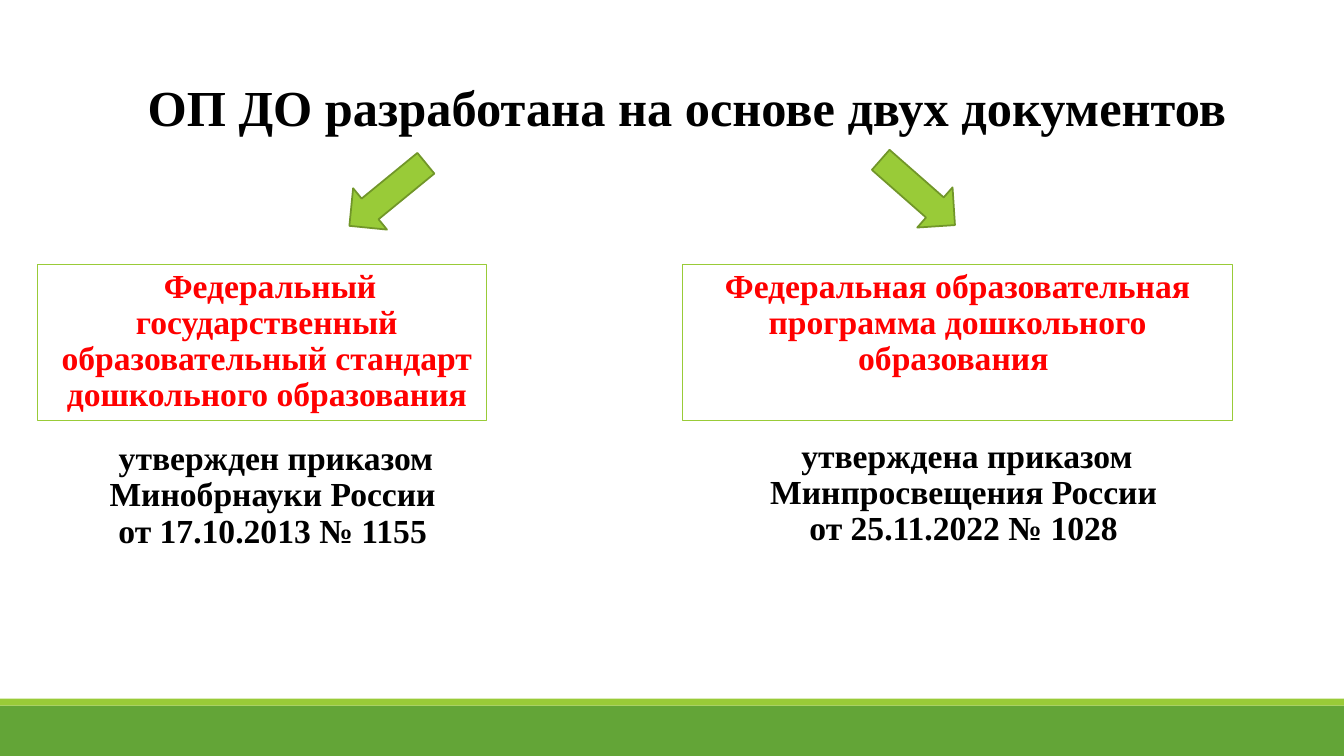
from lxml.etree import SubElement
from pptx import Presentation
from pptx.dml.color import RGBColor
from pptx.enum.shapes import MSO_SHAPE
from pptx.enum.text import MSO_ANCHOR, MSO_AUTO_SIZE, PP_ALIGN
from pptx.oxml.ns import qn
from pptx.util import Pt

# Content: places are left, top, width, height in points
TITLE = "ОП ДО разработана на основе двух документов"
TITLE_PLACE = (72, 51, 837.5, 51)

DOCUMENTS = [
    {
        "name": "Федеральный государственный образовательный стандарт дошкольного образования",
        "order": "утвержден приказом Минобрнауки России\vот 17.10.2013 № 1155",
        "name_place": (26.5, 188.6, 321, 111.6),
        "order_place": (34.5, 311.8, 313.2, 103.7),
        "arrow": (257.8, 103.7, 50.7),
        "hanging": True,
    },
    {
        "name": "Федеральная образовательная программа дошкольного образования ",
        "order": "утверждена приказом Минпросвещения России\vот 25.11.2022 № 1028",
        "name_place": (487.4, 188.6, 393.1, 111.6),
        "order_place": (501.1, 310.3, 367.2, 105.1),
        "arrow": (636.5, 102.2, 311.3),
        "hanging": False,
    },
]

COLOURS = {
    "black": "000000",
    "red": "FF0000",
    "lime": "99CB38",
    "olive": "719629",
    "green": "63A537",
}
WIDTH, HEIGHT = 960, 540
FOOTER_HEIGHT, STRIP_HEIGHT = 36, 5
ARROW_SIZE = (38.2, 70.6)
HANG = 7.2

FRAME_FORMAT = {
    "word_wrap": True,
    "auto_size": MSO_AUTO_SIZE.NONE,
    "vertical_anchor": MSO_ANCHOR.TOP,
    "margin_left": 0,
    "margin_right": 0,
    "margin_top": Pt(3.6),
    "margin_bottom": Pt(3.6),
}
TITLE_FRAME_FORMAT = FRAME_FORMAT | {"margin_left": Pt(7.2), "margin_right": Pt(7.2)}
PARA_FORMAT = {
    "alignment": PP_ALIGN.CENTER,
    "line_spacing": 0.9,
    "space_before": Pt(12),
    "space_after": Pt(2),
}
TITLE_PARA_FORMAT = {"alignment": PP_ALIGN.CENTER, "line_spacing": 1.0}


def colour(name):
    return RGBColor.from_string(COLOURS[name])


def apply(target, values):
    for name, value in values.items():
        setattr(target, name, value)


def points(place):
    return [Pt(value) for value in place]


def write(shape, text, size, ink, frame_format=FRAME_FORMAT, para_format=PARA_FORMAT):
    apply(shape.text_frame, frame_format)
    para = shape.text_frame.paragraphs[0]
    para.text = text
    apply(para, para_format)
    for span in para.runs:
        apply(span.font, {"name": "Times New Roman", "size": Pt(size), "bold": True})
        span.font.color.rgb = colour(ink)
    return para


def add_blank_bullet(para):
    properties = para._p.get_or_add_pPr()
    properties.set("marL", str(Pt(HANG)))
    properties.set("indent", str(-Pt(HANG)))
    bullet_colour = SubElement(properties, qn("a:buClr"))
    SubElement(bullet_colour, qn("a:srgbClr"), val=COLOURS["lime"])
    SubElement(properties, qn("a:buChar"), char=" ")


def add_figure(page, kind, place, fill=None, line=None, line_width=0.75):
    shape = page.shapes.add_shape(kind, *points(place))
    shape.shadow.inherit = False
    if fill:
        shape.fill.solid()
        shape.fill.fore_color.rgb = colour(fill)
    else:
        shape.fill.background()
    if line:
        shape.line.color.rgb = colour(line)
        shape.line.width = Pt(line_width)
    else:
        shape.line.fill.background()
    return shape


def main():
    deck = Presentation()
    deck.slide_width, deck.slide_height = Pt(WIDTH), Pt(HEIGHT)
    page = deck.slides.add_slide(deck.slide_layouts[5])

    # Footer bands
    footer_top = HEIGHT - FOOTER_HEIGHT
    add_figure(page, MSO_SHAPE.RECTANGLE, (0, footer_top, WIDTH, FOOTER_HEIGHT), "green")
    add_figure(page, MSO_SHAPE.RECTANGLE,
               (0, footer_top - STRIP_HEIGHT, WIDTH, STRIP_HEIGHT), "lime")

    # Title
    title = page.shapes.title
    title.left, title.top, title.width, title.height = points(TITLE_PLACE)
    write(title, TITLE, 36, "black", TITLE_FRAME_FORMAT, TITLE_PARA_FORMAT)

    # Each document: arrow, framed name, order that approved it
    for document in DOCUMENTS:
        left, top, angle = document["arrow"]
        arrow = add_figure(page, MSO_SHAPE.DOWN_ARROW, (left, top, *ARROW_SIZE),
                           "lime", "olive", 1.25)
        arrow.rotation = angle

        frame = add_figure(page, MSO_SHAPE.RECTANGLE, document["name_place"], line="lime")
        name = write(frame, document["name"], 24, "red")
        if document["hanging"]:
            add_blank_bullet(name)

        box = page.shapes.add_textbox(*points(document["order_place"]))
        add_blank_bullet(write(box, document["order"], 24, "black"))

    deck.save("out.pptx")


if __name__ == "__main__":
    main()
